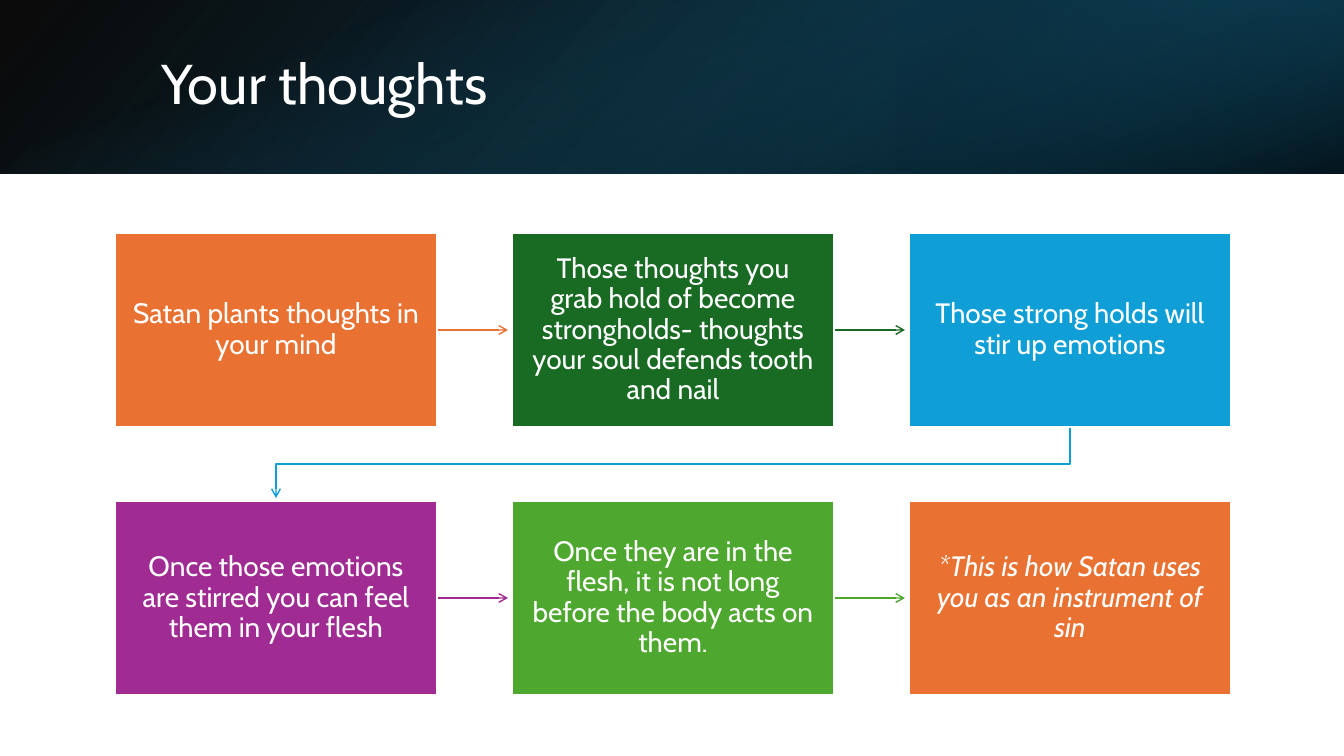
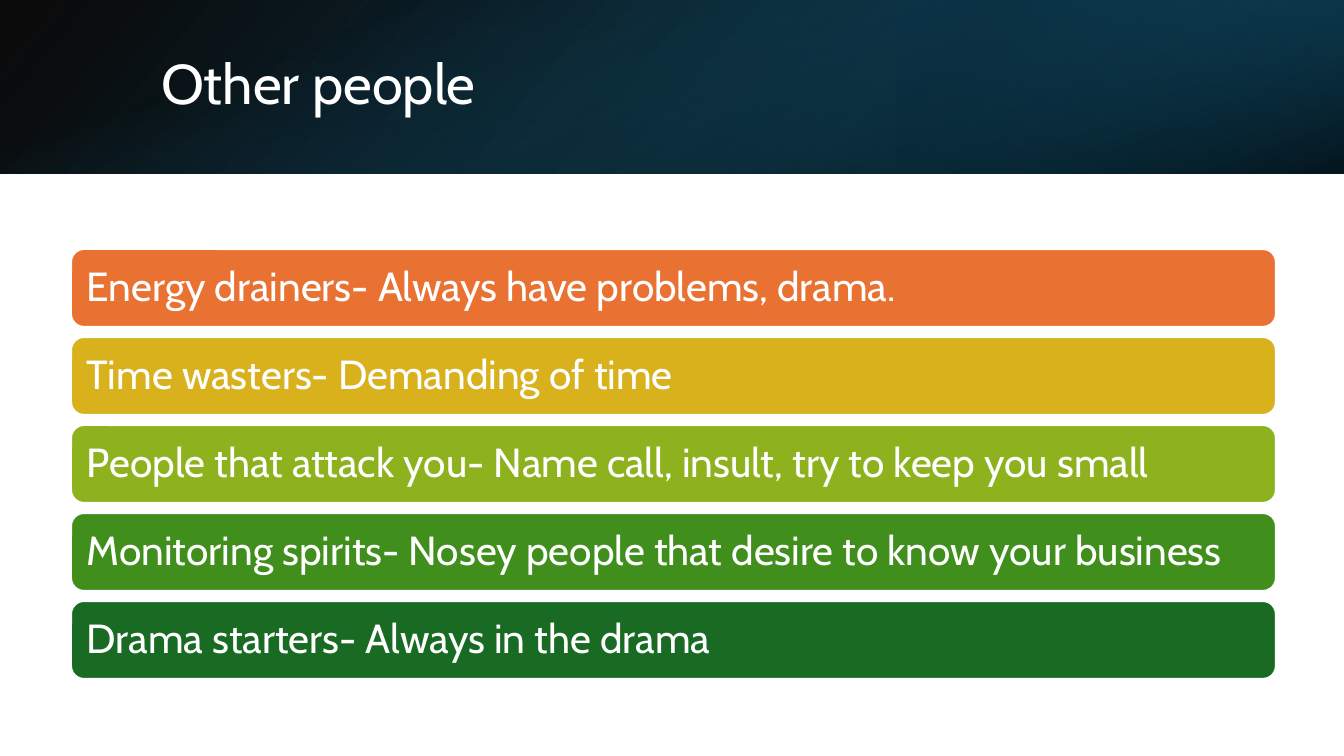
from itertools import pairwise

from lxml.etree import SubElement
from pptx import Presentation
from pptx.dml.color import RGBColor
from pptx.enum.shapes import MSO_CONNECTOR as Connector, MSO_SHAPE as Preset
from pptx.enum.text import MSO_ANCHOR as Anchor, PP_ALIGN as Align
from pptx.oxml.ns import qn
from pptx.util import Emu, Pt

PX = 914400 / 100.8
WIDTH, HEIGHT, BAND = 1344, 756, 174
FONT = "Cabin"
COLORS = {
    "white": "FFFFFF", "black": "000000", "navy": "0B3041",
    "teal": "104862", "petrol": "156082", "orange": "E97132",
    "forest": "196B24", "sky": "0F9ED5", "purple": "A02B93",
    "leaf": "4EA72E", "gold": "D8B11D", "lime": "8EB21E", "grass": "408E1C",
}


def px(length):
    return Emu(round(length * PX))


def rgb(name):
    return RGBColor.from_string(COLORS[name])


def write(shape, text, size, align=Align.LEFT, italic=False, inset=(10, 5)):
    """Set one white paragraph, centred vertically; inset is (sides, top and bottom)."""
    frame = shape.text_frame
    frame.word_wrap = True
    frame.vertical_anchor = Anchor.MIDDLE
    frame.margin_left = frame.margin_right = px(inset[0])
    frame.margin_top = frame.margin_bottom = px(inset[1])
    paragraph = frame.paragraphs[0]
    paragraph.alignment = align
    paragraph.line_spacing = 0.9
    run = paragraph.add_run()
    run.text = text
    run.font.name = FONT
    run.font.size = Pt(size)
    run.font.italic = italic
    run.font.color.rgb = rgb("white")


def fill_gradient(shape, stops, angle):
    """Fill with stops given as (position %, colour, opacity %)."""
    shape.fill.background()
    properties = shape.element.spPr
    gradient = SubElement(properties, qn("a:gradFill"), rotWithShape="1")
    stop_list = SubElement(gradient, qn("a:gsLst"))
    for position, color, opacity in stops:
        stop = SubElement(stop_list, qn("a:gs"), pos=str(position * 1000))
        value = SubElement(stop, qn("a:srgbClr"), val=COLORS[color])
        SubElement(value, qn("a:alpha"), val=str(opacity * 1000))
    SubElement(gradient, qn("a:lin"), ang=str(angle * 60000), scaled="0")
    properties.replace(properties.find(qn("a:noFill")), gradient)


class Deck:
    def __init__(self):
        self.presentation = Presentation()
        self.presentation.slide_width = px(WIDTH)
        self.presentation.slide_height = px(HEIGHT)
        self.slide = None

    def add_slide(self, title):
        layout = self.presentation.slide_layouts[6]
        self.slide = self.presentation.slides.add_slide(layout)
        self.band()
        box = self.slide.shapes.add_textbox(px(151), px(38), px(1107), px(97))
        write(box, title, size=40)

    def shape(self, preset, left, top, width, height):
        shape = self.slide.shapes.add_shape(
            preset, px(left), px(top), px(width), px(height))
        shape.shadow.inherit = False
        return shape

    def band(self):
        self.layer(0, 0, WIDTH, BAND, angle=140, flip=True,
                   stops=[(0, "black", 96), (100, "teal", 100)])
        self.layer(WIDTH * 2 // 3, 0, WIDTH // 3, BAND, angle=320, flip=True,
                   rotation=180, stops=[(19, "navy", 68), (100, "petrol", 79)])
        offset = (WIDTH - BAND) // 2
        self.layer(offset, -offset, BAND, WIDTH, angle=340, rotation=90,
                   stops=[(23, "petrol", 0), (99, "black", 74)])

    def layer(self, left, top, width, height, stops, angle, rotation=0, flip=False):
        shape = self.shape(Preset.RECTANGLE, left, top, width, height)
        shape.line.fill.background()
        shape.rotation = rotation
        if flip:
            shape.element.spPr.xfrm.set("flipH", "1")
        fill_gradient(shape, stops, angle)

    def card(self, preset, left, top, width, height, color, text, **text_format):
        shape = self.shape(preset, left, top, width, height)
        shape.fill.solid()
        shape.fill.fore_color.rgb = rgb(color)
        shape.line.color.rgb = rgb("white")
        shape.line.width = Pt(1.5)
        write(shape, text, **text_format)

    def arrow(self, points, color):
        """Draw an arrow through the points: a connector for two, else an outline."""
        shapes = self.slide.shapes
        if len(points) == 2:
            ends = [px(value) for point in points for value in point]
            line = shapes.add_connector(Connector.STRAIGHT, *ends)
        else:
            builder = shapes.build_freeform(*points[0], scale=PX)
            builder.add_line_segments(points[1:], close=False)
            line = builder.convert_to_shape()
            line.fill.background()
        line.line.color.rgb = rgb(color)
        line.line.width = Pt(1)
        properties = line.element.spPr
        SubElement(properties.find(qn("a:ln")), qn("a:tailEnd"), type="arrow")
        SubElement(properties, qn("a:effectLst"))


def thoughts_slide(deck):
    deck.add_slide("Your thoughts")
    steps = [
        ("orange", "Satan plants thoughts in your mind"),
        ("forest", "Those thoughts you grab hold of become strongholds- "
                   "thoughts your soul defends tooth and nail"),
        ("sky", "Those strong holds will stir up emotions"),
        ("purple", "Once those emotions are stirred you can feel them in your flesh"),
        ("leaf", "Once they are in the flesh, it is not long before "
                 "the body acts on them."),
        ("orange", "*This is how Satan uses you as an instrument of sin"),
    ]
    columns, width, height, reach = 3, 322, 194, 71
    spots = [(115 + 397 * (index % columns), 233 + 268 * (index // columns))
             for index in range(len(steps))]

    for (color, _), ((left, top), (next_left, next_top)) in zip(steps, pairwise(spots)):
        if top == next_top:
            start, middle = left + width, top + height // 2
            points = [(start, middle), (start + reach, middle)]
        else:
            start, end = left + width // 2, next_left + width // 2
            bottom = top + height
            turn = (bottom + next_top) // 2
            points = [(start, bottom), (start, turn), (end, turn), (end, bottom + reach)]
        deck.arrow(points, color)

    for (color, text), (left, top) in zip(steps, spots):
        deck.card(Preset.RECTANGLE, left, top, width, height, color, text, size=20,
                  align=Align.CENTER, italic=text.startswith("*"), inset=(16, 16))


def people_slide(deck):
    deck.add_slide("Other people")
    kinds = [
        ("orange", "Energy drainers- Always have problems, drama."),
        ("gold", "Time wasters- Demanding of time"),
        ("lime", "People that attack you- Name call, insult, try to keep you small"),
        ("grass", "Monitoring spirits- Nosey people that desire to know your business"),
        ("forest", "Drama starters- Always in the drama"),
    ]
    for index, (color, text) in enumerate(kinds):
        deck.card(Preset.ROUNDED_RECTANGLE, 71, 249 + 88 * index, 1205, 78,
                  color, text, size=29, inset=(12, 12))


def main():
    deck = Deck()
    thoughts_slide(deck)
    people_slide(deck)
    deck.presentation.save("out.pptx")


if __name__ == "__main__":
    main()
